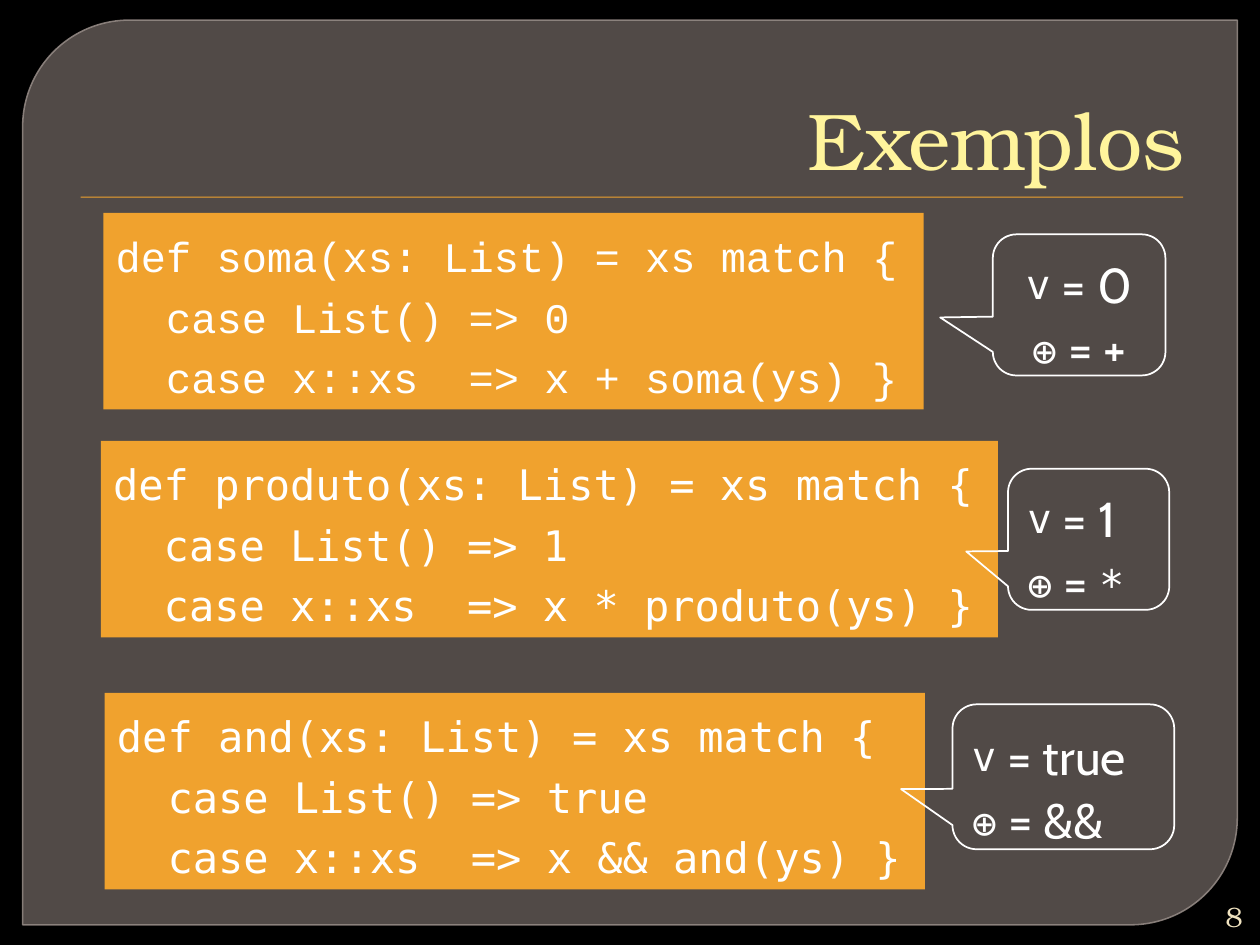
from lxml.etree import SubElement
from pptx import Presentation
from pptx.dml.color import RGBColor
from pptx.enum.shapes import MSO_SHAPE
from pptx.enum.text import MSO_ANCHOR, MSO_AUTO_SIZE, PP_ALIGN
from pptx.oxml.ns import qn
from pptx.util import Inches, Pt

COLORS = {
    "background": "000000", "panel": "7D726E", "panel_line": "948A85",
    "accent": "F0A22E", "title": "FFF49C", "number": "F0E3C0", "text": "FFFFFF",
}
SERIF, SANS, MONO = "TeX Gyre Bonum", "Cabin", "DejaVu Sans Mono"


def color(name):
    return RGBColor.from_string(COLORS[name])


def set_opacity(fill, percent):
    solid = fill._xPr.find(qn("a:solidFill"))
    SubElement(solid[0], qn("a:alpha")).set("val", str(percent * 1000))


class SlideBuilder:
    def __init__(self, page):
        self.page = page
        page.background.fill.solid()
        page.background.fill.fore_color.rgb = color("background")

    def shape(self, kind, place, fill=None, line=None, width=1, adjustments=()):
        shape = self.page.shapes.add_shape(kind, *map(Inches, place))
        shape.shadow.inherit = False
        for index, value in enumerate(adjustments):
            shape.adjustments[index] = value
        if fill:
            shape.fill.solid()
            shape.fill.fore_color.rgb = color(fill)
        else:
            shape.fill.background()
        if line:
            shape.line.color.rgb = color(line)
            shape.line.width = Pt(width)
        else:
            shape.line.fill.background()
        return shape

    def add_text(self, box, paragraphs, ink="text", align=PP_ALIGN.LEFT, spacing=None, **frame):
        """Fill a box with paragraphs of (text, font, size, baseline percent) spans."""
        text_frame = box.text_frame
        for name, value in frame.items():
            setattr(text_frame, name, value)
        for index, spans in enumerate(paragraphs):
            para = text_frame.add_paragraph() if index else text_frame.paragraphs[0]
            para.alignment = align
            if spacing:
                para.line_spacing = spacing
            for text, font, size, baseline in spans:
                span = para.add_run()
                span.text = text
                for name, value in {"name": font, "size": Pt(size)}.items():
                    setattr(span.font, name, value)
                span.font.color.rgb = color(ink)
                if baseline:
                    span._r.get_or_add_rPr().set("baseline", str(baseline * 1000))

    def label(self, place, text, size, ink, anchor):
        box = self.page.shapes.add_textbox(*map(Inches, place))
        self.add_text(box, [[(text, SERIF, size, 0)]], ink, PP_ALIGN.RIGHT,
                      word_wrap=True, vertical_anchor=anchor)

    def panel(self):
        panel = self.shape(MSO_SHAPE.ROUND_2_DIAG_RECTANGLE, (0.18, 0.16, 9.64, 7.18),
                           "panel", "panel_line", 0.87, (0.118, 0))
        set_opacity(panel.fill, 65)
        set_opacity(panel.line.fill, 88)

    def fitted(self, box, paragraphs, **style):
        self.add_text(box, paragraphs, word_wrap=False, vertical_anchor=MSO_ANCHOR.MIDDLE,
                      auto_size=MSO_AUTO_SIZE.SHAPE_TO_FIT_TEXT, **style)

    def code(self, place, lines, font):
        box = self.shape(MSO_SHAPE.RECTANGLE, place, "accent")
        self.fitted(box, [[(line, font, 24, 0)] for line in lines], spacing=1.2)

    def callout(self, place, pointer, value, operator, align):
        box = self.shape(MSO_SHAPE.ROUNDED_RECTANGULAR_CALLOUT, place, line="text",
                         adjustments=(*pointer, 0.167))
        self.fitted(box, [
            [("v", MONO, 40, 6), (f" = {value}", SANS, 28, 0)],
            [("⊕", MONO, 24, 0), (" = ", SANS, 28, 0), operator],
        ], align=align)


EXAMPLES = [
    dict(name="soma", empty="0", symbol="+", font="Courier New",
         code_at=(0.82, 1.69, 6.51, 1.56), callout_at=(7.88, 1.86, 1.37, 1.12),
         pointer=(-0.805, 0.089), operator=("+", SANS, 28, 0), align=PP_ALIGN.CENTER),
    dict(name="produto", empty="1", symbol="*", font=MONO,
         code_at=(0.8, 3.5, 7.12, 1.56), callout_at=(8, 3.72, 1.28, 1.12),
         pointer=(-0.759, 0.086), operator=("*", MONO, 24, 0), align=PP_ALIGN.LEFT),
    dict(name="and", empty="true", symbol="&&", font=MONO,
         code_at=(0.83, 5.5, 6.51, 1.56), callout_at=(7.56, 5.59, 1.76, 1.15),
         pointer=(-0.732, 0.085), operator=("&&", SANS, 28, 0), align=PP_ALIGN.LEFT),
]


def main():
    deck = Presentation()
    deck.slide_width, deck.slide_height = Inches(10), Inches(7.5)
    builder = SlideBuilder(deck.slides.add_slide(deck.slide_layouts[6]))
    builder.panel()
    builder.shape(MSO_SHAPE.RECTANGLE, (0.64, 1.56, 8.75, 0.01), "accent")
    builder.label((0.5, 0.28, 9, 1.25), "Exemplos", 46, "title", MSO_ANCHOR.BOTTOM)
    builder.label((9.45, 7.12, 0.51, 0.3), "8", 16, "number", MSO_ANCHOR.MIDDLE)
    for item in EXAMPLES:
        builder.code(item["code_at"], [
            f"def {item['name']}(xs: List) = xs match {{",
            f"  case List() => {item['empty']}",
            f"  case x::xs  => x {item['symbol']} {item['name']}(ys) }}",
        ], item["font"])
    for item in EXAMPLES:
        builder.callout(item["callout_at"], item["pointer"], item["empty"],
                        item["operator"], item["align"])
    deck.save("out.pptx")


if __name__ == "__main__":
    main()
